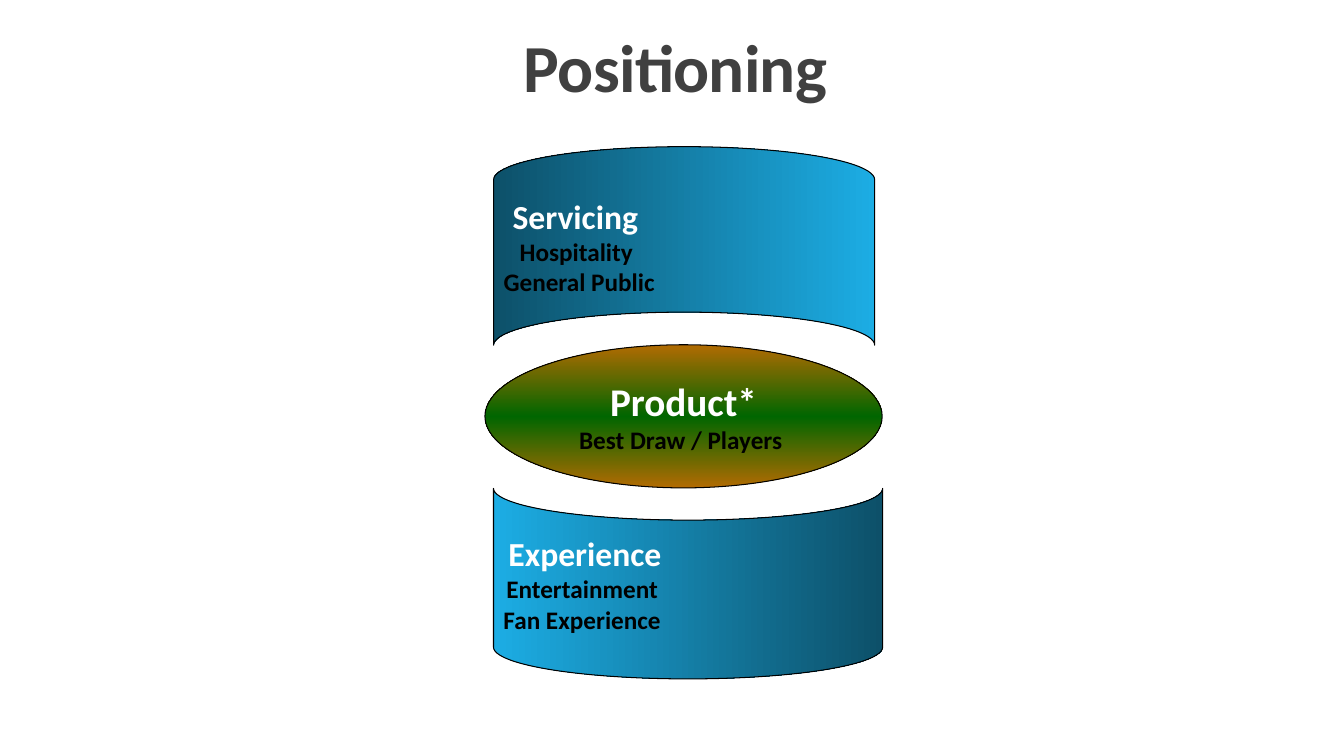
from copy import deepcopy

from pptx import Presentation
from pptx import util as u
from pptx.dml.color import RGBColor
from pptx.enum import shapes, text

PX = 9144


def color(value):
    return RGBColor.from_string(value)


def write_lines(box, lines):
    frame = box.text_frame
    for index, (words, size, value) in enumerate(lines):
        para = frame.paragraphs[0] if index == 0 else frame.add_paragraph()
        para.alignment = text.PP_ALIGN.CENTER
        para.add_run().text = words
        para.font.name = "Calibri"
        para.font.size = u.Pt(size)
        para.font.bold = True
        para.font.color.rgb = color(value)


deck = Presentation()
deck.slide_width, deck.slide_height = 1333 * PX, 750 * PX
page = deck.slides.add_slide(deck.slide_layouts[6])

title = page.shapes.add_textbox(120 * PX, 5 * PX, 1100 * PX, 105 * PX)
title.text_frame.word_wrap = True
title.text_frame.vertical_anchor = text.MSO_ANCHOR.BOTTOM
write_lines(title, [("Positioning", 48, "404040")])
heading = title.text_frame.paragraphs[0]
heading.line_spacing = 0.85
heading.runs[0].font._element.set("spc", "-50")

ellipse = shapes.MSO_SHAPE.OVAL
band = shapes.MSO_SHAPE.FLOWCHART_STORED_DATA
blues = ["1CADE4", "0D5069"]
parts = [
    (ellipse, (481, 342, 394, 142), 0, ["B26B02", "006600", "B26B02"], {},
     [("Product*", 28), ("Best Draw / Players ", 18)]),
    (band, (580, 55, 197, 378), 90, blues, {"vert": "eaVert", "rot": "10800000"},
     [("Servicing ", 24), ("Hospitality ", 18), ("General Public", 18)]),
    (band, (588, 386, 189, 386), 270, blues, {"vert": "eaVert"},
     [("Experience", 24), ("Entertainment ", 18), ("Fan Experience ", 18)]),
]

for kind, place, rotation, colors, direction, lines in parts:
    shape = page.shapes.add_shape(kind, *(length * PX for length in place))
    shape.rotation = rotation
    shape.shadow.inherit = False
    shape.line.color.rgb = color("000000")
    shape.line.width = u.Pt(0.75)

    shape.fill.gradient()
    shape.fill.gradient_angle = 270
    if len(colors) == 3:
        first_stop = shape.fill.gradient_stops[0]._gs
        first_stop.addnext(deepcopy(first_stop))
    for index, (stop, value) in enumerate(zip(shape.fill.gradient_stops, colors)):
        stop.color.rgb = color(value)
        stop.position = index / (len(colors) - 1)

    frame = shape.text_frame
    frame.word_wrap = False
    frame.vertical_anchor = text.MSO_ANCHOR.MIDDLE
    for name, value in direction.items():
        frame._txBody.bodyPr.set(name, value)
    write_lines(shape, [(words, size, "000000" if index else "FFFFFF")
                        for index, (words, size) in enumerate(lines)])

deck.save("out.pptx")
